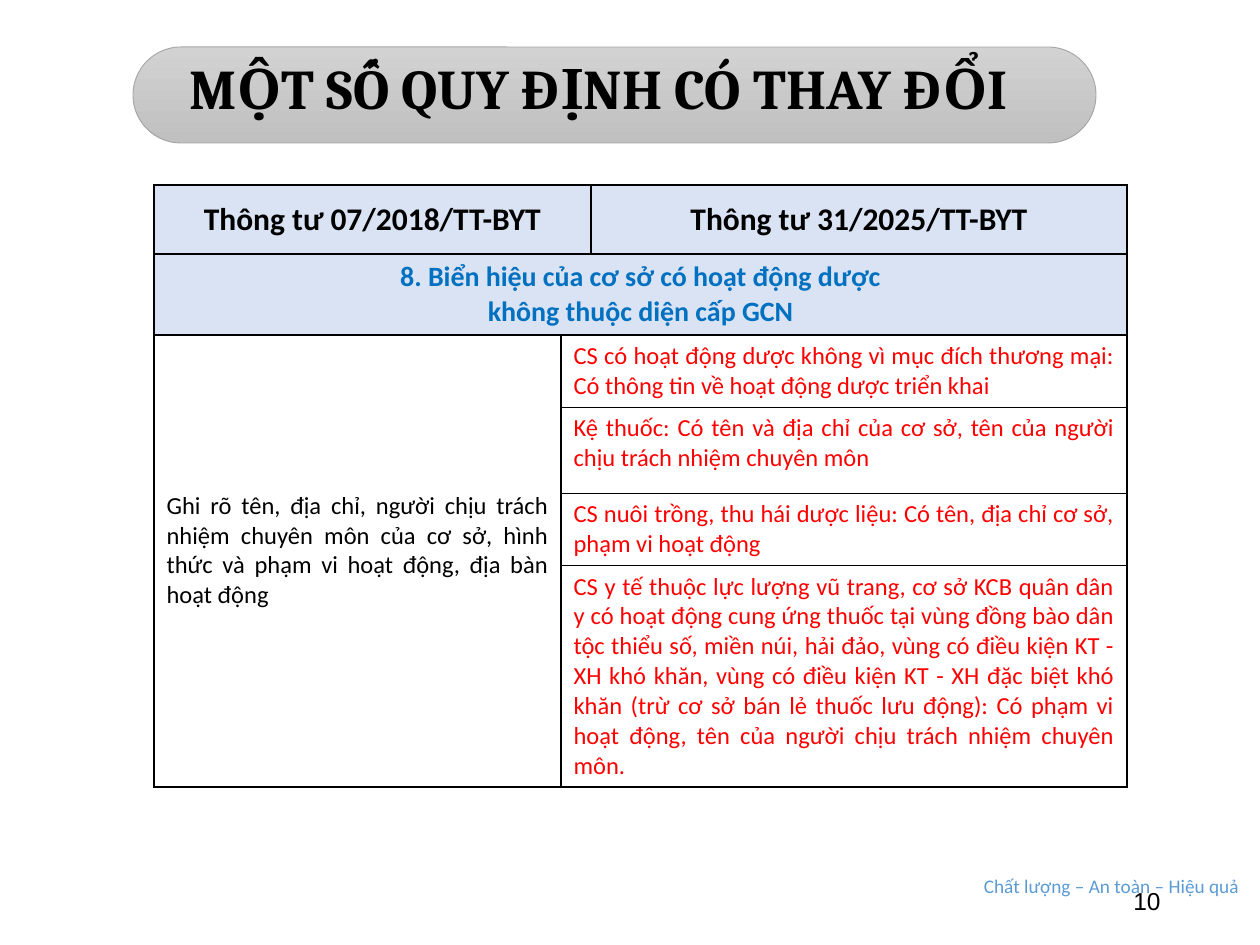
from lxml import etree
from pptx import Presentation
from pptx import util as u
from pptx.dml.color import RGBColor
from pptx.enum import shapes, text
from pptx.oxml import ns

PX = 914400 / 126
BLACK = RGBColor(0x00, 0x00, 0x00)
WHITE = RGBColor(0xFF, 0xFF, 0xFF)
RED = RGBColor(0xFF, 0x00, 0x00)
BLUE = RGBColor(0x00, 0x70, 0xC0)
SKY = RGBColor(0x5B, 0x9B, 0xD5)
PALE = RGBColor(0xDA, 0xE3, 0xF3)
SILVER = RGBColor(0xD2, 0xD2, 0xD2)
GRAY = RGBColor(0xC0, 0xC0, 0xC0)
EDGE = RGBColor(0xA5, 0xA5, 0xA5)
LEFT, MID, RIGHT, JUST = (text.PP_ALIGN.LEFT, text.PP_ALIGN.CENTER,
                          text.PP_ALIGN.RIGHT, text.PP_ALIGN.JUSTIFY)

COLS = [407, 30, 536]
ROWS = [69, 81, 72, 86, 72, 221]
HEADS = ["Thông tư 07/2018/TT-BYT", "Thông tư 31/2025/TT-BYT"]
TOPIC = ("8. Biển hiệu của cơ sở có hoạt động dược\n"
         "không thuộc diện cấp GCN")
OLD = ("Ghi rõ tên, địa chỉ, người chịu trách nhiệm chuyên môn của cơ sở, "
       "hình thức và phạm vi hoạt động, địa bàn hoạt động")
NEW = [
    "CS có hoạt động dược không vì mục đích thương mại: "
    "Có thông tin về hoạt động dược triển khai",
    "Kệ thuốc: Có tên và địa chỉ của cơ sở, tên của người "
    "chịu trách nhiệm chuyên môn",
    "CS nuôi trồng, thu hái dược liệu: Có tên, địa chỉ cơ sở, "
    "phạm vi hoạt động",
    "CS y tế thuộc lực lượng vũ trang, cơ sở KCB quân dân y có hoạt động "
    "cung ứng thuốc tại vùng đồng bào dân tộc thiểu số, miền núi, hải đảo, "
    "vùng có điều kiện KT - XH khó khăn, vùng có điều kiện KT - XH đặc biệt "
    "khó khăn (trừ cơ sở bán lẻ thuốc lưu động): Có phạm vi hoạt động, "
    "tên của người chịu trách nhiệm chuyên môn.",
]


def px(n):
    return u.Emu(round(n * PX))


def place(box):
    return [px(n) for n in box]


def write(frame, words, size=14, font="Calibri", color=BLACK, bold=False,
          align=LEFT, space=None):
    frame.text = words
    for para in frame.paragraphs:
        para.alignment = align
        para.line_spacing = space
        para.font.size = u.Pt(size)
        para.font.name = font
        para.font.bold = bold
        para.font.color.rgb = color


def border(cell):
    props = cell._tc.get_or_add_tcPr()
    for i, side in enumerate(("lnL", "lnR", "lnT", "lnB")):
        line = etree.Element(ns.qn("a:" + side), w="12700")
        fill = etree.SubElement(line, ns.qn("a:solidFill"))
        etree.SubElement(fill, ns.qn("a:srgbClr"), val=str(BLACK))
        props.insert(i, line)


def title(slide, box):
    x, y, w, h = box
    # Pill behind the heading
    pill = slide.shapes.add_shape(
        shapes.MSO_SHAPE.ROUNDED_RECTANGLE, *place((x + 6, y, w + 19, h + 8)))
    pill.adjustments[0] = 0.5
    pill.shadow.inherit = False
    pill.fill.gradient()
    pill.fill.gradient_angle = 270
    for stop, color in zip(pill.fill.gradient_stops, (SILVER, GRAY)):
        stop.color.rgb = color
    pill.line.color.rgb = EDGE
    pill.line.width = u.Pt(0.5)
    # Heading, brought in front of the pill
    head = slide.shapes.title
    head.left, head.top, head.width, head.height = place(box)
    pill._element.addnext(head._element)
    frame = head.text_frame
    frame.auto_size = text.MSO_AUTO_SIZE.NONE
    frame.vertical_anchor = text.MSO_ANCHOR.MIDDLE
    write(frame, "MỘT SỐ QUY ĐỊNH CÓ THAY ĐỔI", size=32, font="Cambria",
          bold=True, align=MID, space=0.9)


def rules(slide, x, y):
    table = slide.shapes.add_table(
        len(ROWS), len(COLS), *place((x, y, sum(COLS), sum(ROWS)))).table
    table.first_row = table.horz_banding = False
    for col, w in zip(table.columns, COLS):
        col.width = px(w)
    for row, h in zip(table.rows, ROWS):
        row.height = px(h)
    for r in range(len(ROWS)):
        for c in range(len(COLS)):
            cell = table.cell(r, c)
            cell.fill.solid()
            cell.fill.fore_color.rgb = PALE if r < 2 else WHITE
            border(cell)
    # Merged areas
    last = len(ROWS) - 1
    table.cell(0, 0).merge(table.cell(0, 1))
    table.cell(1, 0).merge(table.cell(1, 2))
    table.cell(2, 0).merge(table.cell(last, 0))
    for r in range(2, last + 1):
        table.cell(r, 1).merge(table.cell(r, 2))
    # Wording
    for c, words in zip((0, 2), HEADS):
        write(table.cell(0, c).text_frame, words, size=18, bold=True, align=MID)
    write(table.cell(1, 0).text_frame, TOPIC, size=16, color=BLUE, bold=True,
          align=MID)
    write(table.cell(2, 0).text_frame, OLD, align=JUST)
    for r, words in enumerate(NEW, 2):
        write(table.cell(r, 1).text_frame, words, color=RED, align=JUST)
    for r, c in ((0, 0), (0, 2), (1, 0), (2, 0)):
        table.cell(r, c).vertical_anchor = text.MSO_ANCHOR.MIDDLE
    table.cell(2, 0).margin_bottom = px(27)


def label(slide, box, words, wrap=True, **form):
    frame = slide.shapes.add_textbox(*place(box)).text_frame
    frame.word_wrap = wrap
    frame.vertical_anchor = text.MSO_ANCHOR.MIDDLE
    write(frame, words, **form)


def main():
    deck = Presentation()
    deck.slide_width, deck.slide_height = px(1260), px(945)
    slide = deck.slides.add_slide(deck.slide_layouts[5])
    # Motto
    label(slide, (956, 868, 311, 36), "Chất lượng – An toàn – Hiệu quả",
          wrap=False, size=11, color=SKY, align=MID)
    title(slide, (127, 47, 944, 88))
    rules(slide, 154, 185)
    # Page number
    label(slide, (890, 876, 283, 50), "10", font="Arial", align=RIGHT)
    deck.save("out.pptx")


if __name__ == "__main__":
    main()
